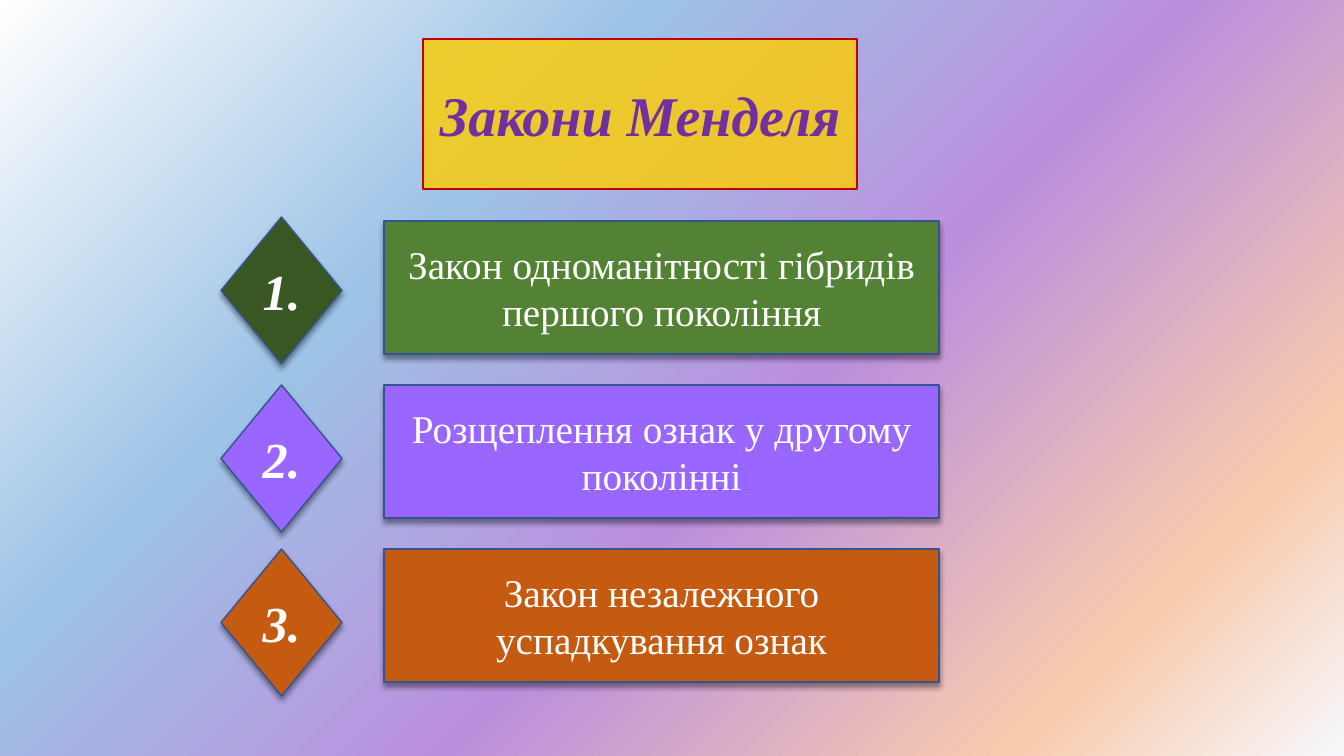
"""Build the slide on the laws of Mendel."""
import dataclasses

import lxml.etree
import pptx
import pptx.dml.color
import pptx.enum.shapes
import pptx.enum.text
import pptx.oxml
import pptx.oxml.ns
import pptx.util

RGB = pptx.dml.color.RGBColor
KIND = pptx.enum.shapes.MSO_SHAPE
PX = 914400 / 100.8
WIDE, HIGH = 1344, 756
FACE = "Times New Roman"
NS = 'xmlns:a="http://schemas.openxmlformats.org/drawingml/2006/main"'

WHITE = RGB(0xFF, 0xFF, 0xFF)
GOLD = RGB(0xFF, 0xCC, 0x00)
RED = RGB(0xC0, 0x00, 0x00)
PURPLE = RGB(0x70, 0x30, 0xA0)
BLUE = RGB(0x32, 0x54, 0x91)
GREEN = RGB(0x54, 0x82, 0x35)
FOREST = RGB(0x38, 0x57, 0x23)
VIOLET = RGB(0x99, 0x66, 0xFF)
ORANGE = RGB(0xC5, 0x5A, 0x11)
BLACK = RGB(0x00, 0x00, 0x00)
STOPS = (
    (0, RGB(0xF6, 0xF8, 0xFC)),
    (16, RGB(0xF8, 0xCB, 0xAD)),
    (43, RGB(0xBC, 0x8F, 0xDE)),
    (69, RGB(0x9D, 0xC3, 0xE6)),
    (100, WHITE),
)

HEAD = {"size": pptx.util.Pt(40), "bold": True, "italic": True}
LABEL = {"size": pptx.util.Pt(36), "bold": True, "italic": True}
PLAIN = {"size": pptx.util.Pt(28), "bold": False, "italic": False}


@dataclasses.dataclass(frozen=True)
class Box:
    """Hold a place in px."""
    left: int
    top: int
    width: int
    height: int


@dataclasses.dataclass(frozen=True)
class Law:
    """Hold one law with its colours and the tops of its two shapes."""
    text: str
    fill: RGB
    badge: RGB
    top: int
    peak: int


LAWS = (
    Law("Закон одноманітності гібридів першого покоління", GREEN, FOREST, 221, 217),
    Law("Розщеплення ознак у другому поколінні", VIOLET, VIOLET, 385, 385),
    Law("Закон незалежного успадкування ознак", ORANGE, ORANGE, 549, 549),
)


def emu(px: int) -> int:
    """Turn px into EMU."""
    return round(px * PX)


def place(box: Box) -> dict[str, int]:
    """Give the place of a box in EMU."""
    return {name: emu(px) for name, px in dataclasses.asdict(box).items()}


def paint(shape, fill: RGB, line: RGB, width: float) -> None:
    """Set the fill and outline of a shape."""
    shape.fill.solid()
    shape.fill.fore_color.rgb = fill
    shape.line.color.rgb = line
    shape.line.width = pptx.util.Pt(width)


def write(shape, text: str, look: dict, ink: RGB) -> None:
    """Put centred text into a shape."""
    frame = shape.text_frame
    frame.text = text
    frame.word_wrap = True
    frame.vertical_anchor = pptx.enum.text.MSO_ANCHOR.MIDDLE
    part = frame.paragraphs[0]
    part.alignment = pptx.enum.text.PP_ALIGN.CENTER
    font = part.runs[0].font
    for name, value in {"name": FACE, **look}.items():
        setattr(font, name, value)
    font.color.rgb = ink


def shade(shape) -> None:
    """Give a shape a soft shadow below it."""
    shape.shadow.inherit = False
    node = shape.element.spPr.find(pptx.oxml.ns.qn("a:effectLst"))
    node.append(pptx.oxml.parse_xml(
        f'<a:outerShdw {NS} blurRad="50800" dist="38100" dir="5400000" '
        f'algn="t" rotWithShape="0"><a:srgbClr val="{BLACK}">'
        '<a:alpha val="40000"/></a:srgbClr></a:outerShdw>'))


def block(slide, kind: KIND, box: Box, fill: RGB, text: str, look: dict) -> None:
    """Draw a shaded shape with white text."""
    shape = slide.shapes.add_shape(kind, **place(box))
    paint(shape, fill, BLUE, 1)
    shade(shape)
    write(shape, text, look, WHITE)


def title(slide, text: str, box: Box) -> None:
    """Turn the title placeholder into a clear gold sign."""
    shape = slide.shapes.title
    for name, value in place(box).items():
        setattr(shape, name, value)
    props = shape.element.spPr
    props.append(pptx.oxml.parse_xml(
        f'<a:prstGeom {NS} prst="flowChartPreparation"><a:avLst/></a:prstGeom>'))
    paint(shape, GOLD, RED, 1.5)
    tint = props.find(pptx.oxml.ns.qn("a:solidFill"))[0]
    lxml.etree.SubElement(tint, pptx.oxml.ns.qn("a:alpha"), val="80000")
    write(shape, text, HEAD, PURPLE)
    shape.text_frame.auto_size = pptx.enum.text.MSO_AUTO_SIZE.NONE


def backdrop(slide) -> None:
    """Fill the background with a blend from the lower right corner."""
    fill = slide.background.fill
    fill.solid()
    fill.fore_color.rgb = WHITE
    node = slide.element.find(".//" + pptx.oxml.ns.qn("p:bgPr"))
    stops = "".join(
        f'<a:gs pos="{pos * 1000}"><a:srgbClr val="{tint}"/></a:gs>'
        for pos, tint in STOPS)
    node.replace(node[0], pptx.oxml.parse_xml(
        f'<a:gradFill {NS} rotWithShape="1"><a:gsLst>{stops}</a:gsLst>'
        '<a:path path="circle"><a:fillToRect l="100000" t="100000"/></a:path>'
        '<a:tileRect r="-100000" b="-100000"/></a:gradFill>'))


def main() -> None:
    """Build and save the deck."""
    deck = pptx.Presentation()
    deck.slide_width, deck.slide_height = emu(WIDE), emu(HIGH)
    slide = deck.slides.add_slide(deck.slide_layouts.get_by_name("Title Only"))
    backdrop(slide)
    title(slide, "Закони Менделя", Box(423, 39, 434, 150))
    for rank, law in enumerate(LAWS, 1):
        block(slide, KIND.RECTANGLE, Box(384, law.top, 555, 133),
              law.fill, law.text, PLAIN)
        block(slide, KIND.FLOWCHART_DECISION, Box(221, law.peak, 121, 147),
              law.badge, f"{rank}.", LABEL)
    deck.save("out.pptx")


if __name__ == "__main__":
    main()
